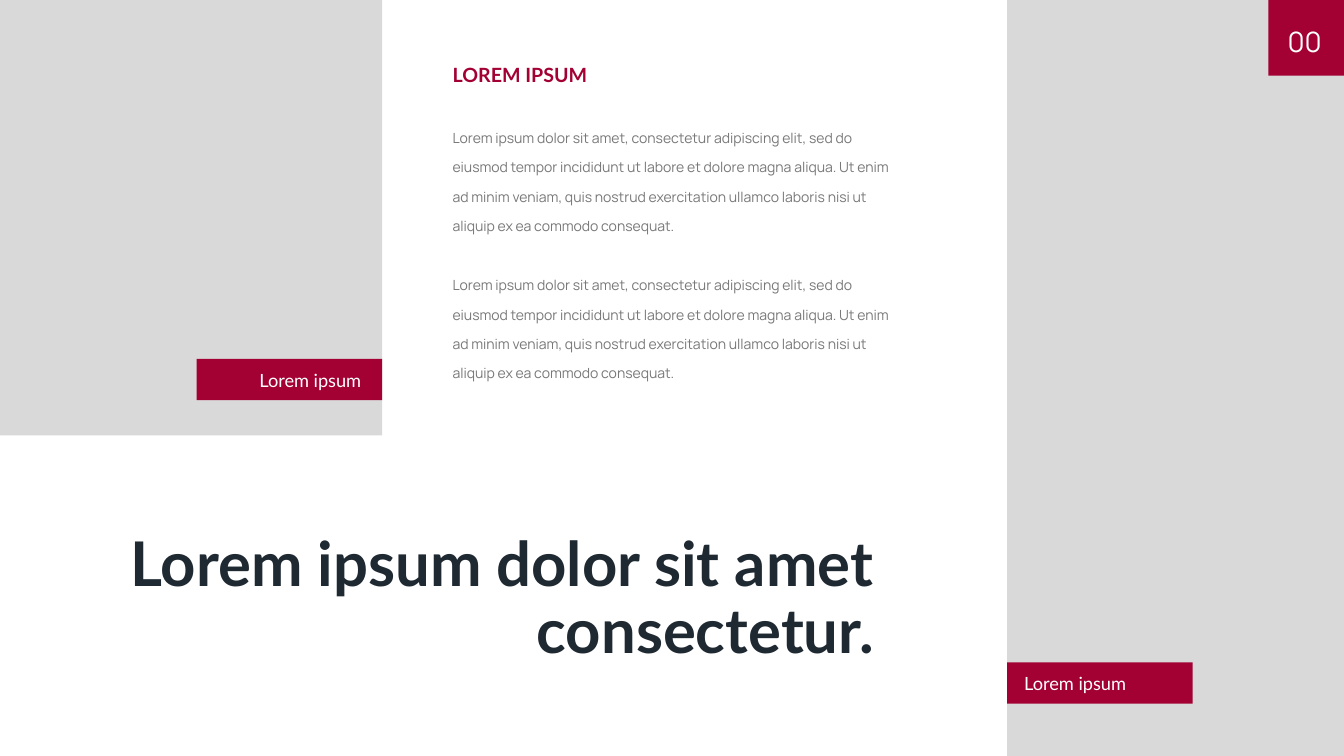
from dataclasses import dataclass
from pptx import Presentation
from pptx.dml.color import RGBColor as RGB
from pptx.enum.shapes import MSO_SHAPE as Shape
from pptx.enum.text import MSO_ANCHOR as Anchor, PP_ALIGN as Align
from pptx.util import Inches, Pt

HEADLINE = "Lorem ipsum dolor sit amet consectetur."
NUMBER = "00"
HEADING = "LOREM IPSUM"
BODY = [
    "Lorem ipsum dolor sit amet, consectetur adipiscing elit, sed do eiusmod "
    "tempor incididunt ut labore et dolore magna aliqua. Ut enim ad minim veniam, "
    "quis nostrud exercitation ullamco laboris nisi ut aliquip ex ea commodo consequat."
] * 2
TAG = "Lorem ipsum"


@dataclass(frozen=True)
class Theme:
    panel: str = "D9D9D9"
    accent: str = "A30134"
    dark: str = "1F2932"
    grey: str = "787878"
    white: str = "FFFFFF"
    display: str = "Lato"
    text: str = "Manrope"
    headline: int = 44
    number: int = 20
    heading: int = 14
    tag: int = 13
    body: int = 10


T = Theme()
W, H = 13.33, 7.5
LEFT_EDGE, RIGHT_EDGE = 3.79, 9.99
LEFT_PANEL_H = 4.32
BADGE = H / 10
TAG_W, TAG_H = 1.84, 0.41
COLUMN_X, COLUMN_W = 4.39, 4.55

prs = Presentation()
prs.slide_width, prs.slide_height = Inches(W), Inches(H)
s = prs.slides.add_slide(prs.slide_layouts[6])


def block(x, y, w, h, color):
    sp = s.shapes.add_shape(Shape.RECTANGLE, Inches(x), Inches(y), Inches(w), Inches(h))
    sp.shadow.inherit = False
    sp.fill.solid()
    sp.fill.fore_color.rgb = RGB.from_string(color)
    sp.line.fill.background()


def write(x, y, w, h, paragraphs, font, size, color, bold=False,
          align=Align.LEFT, spacing=None, gap=0, inset=True, anchor=Anchor.TOP):
    tf = s.shapes.add_textbox(Inches(x), Inches(y), Inches(w), Inches(h)).text_frame
    tf.word_wrap = True
    tf.vertical_anchor = anchor
    if not inset:
        tf.margin_left = tf.margin_right = tf.margin_top = tf.margin_bottom = 0
    for i, text in enumerate(paragraphs):
        p = tf.add_paragraph() if i else tf.paragraphs[0]
        p.text = text
        p.alignment = align
        if spacing:
            p.line_spacing = spacing
        if i:
            p.space_before = Pt(gap)
        p.font.name, p.font.size, p.font.bold = font, Pt(size), bold
        p.font.color.rgb = RGB.from_string(color)


def tag(x, y, text_dx, align):
    block(x, y, TAG_W, TAG_H, T.accent)
    write(x + text_dx, y + 0.05, 1.61, 0.32, [TAG], T.display, T.tag, T.white, align=align)


block(0, 0, LEFT_EDGE, LEFT_PANEL_H, T.panel)
block(RIGHT_EDGE, 0, W - RIGHT_EDGE, H, T.panel)
block(W - BADGE, 0, BADGE, BADGE, T.accent)

write(1.08, 5.24, 7.59, 1.43, [HEADLINE], T.display, T.headline, T.dark, bold=True,
      align=Align.RIGHT, spacing=0.9, inset=False, anchor=Anchor.MIDDLE)
write(12.56, 0.06, 0.55, 0.69, [NUMBER], T.text, T.number, T.white,
      align=Align.RIGHT, inset=False, anchor=Anchor.MIDDLE)
write(COLUMN_X, 0.58, COLUMN_W, 0.34, [HEADING], T.display, T.heading, T.accent, bold=True)
write(COLUMN_X, 1.11, COLUMN_W, 2.72, BODY, T.text, T.body, T.grey, spacing=1.75, gap=21)

tag(RIGHT_EDGE, 6.57, 0.07, Align.LEFT)
tag(LEFT_EDGE - TAG_W, 3.56, 0.12, Align.RIGHT)

prs.save("out.pptx")
